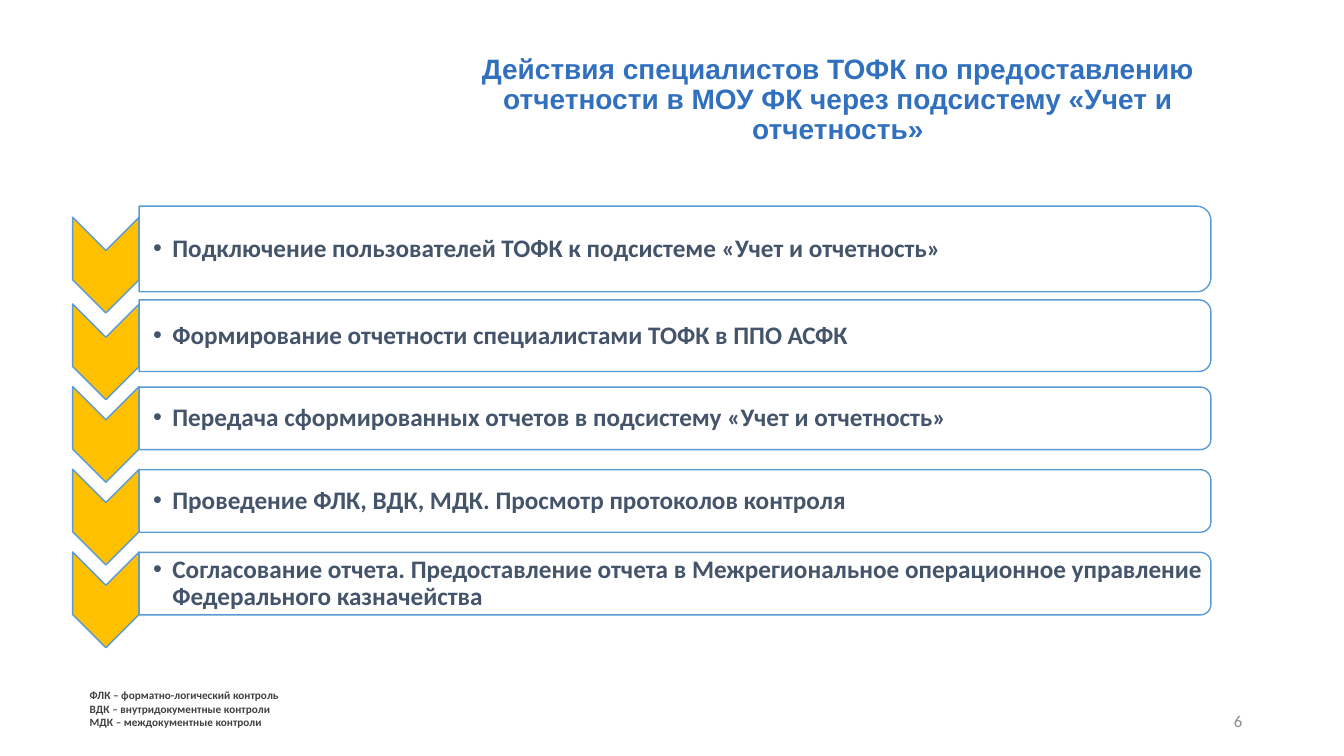
"""Build the slide listing the reporting steps as a chain of chevrons."""
from dataclasses import dataclass
from typing import Any

from lxml.etree import SubElement as Sub
from pptx import Presentation as Deck
from pptx.dml.color import RGBColor as Color
from pptx.enum.shapes import MSO_SHAPE as Kind
from pptx.enum.text import MSO_ANCHOR as Anchor, PP_ALIGN as Align
from pptx.oxml.ns import qn
from pptx.util import Emu, Pt

SCALE = 9144


@dataclass(frozen=True)
class Theme:
    title: str = "3070BE"
    body: str = "44546A"
    note: str = "404040"
    page: str = "8C8C8C"
    gold: str = "FFC000"
    edge: str = "5B9BD5"
    white: str = "FFFFFF"
    head: str = "Arial"
    sans: str = "Calibri"
    big: int = 20
    mid: int = 18
    norm: int = 12
    small: int = 8


@dataclass(frozen=True)
class Step:
    mid: int
    high: int
    text: str


@dataclass(frozen=True)
class Label:
    box: tuple[int, int, int, int]
    lines: tuple[str, ...]
    font: str
    size: int
    color: str
    bold: bool = True
    align: Align = Align.LEFT
    space: float = 1.0
    hang: int = 0
    bullet: bool = False
    inset: tuple[int, int, int, int] = (10, 5, 10, 5)


THEME = Theme()
LEFT, WIDE = 138, 1063
ARROW = (95, 66)
DROP = 16
STEPS = (
    Step(247, 85, "Подключение пользователей ТОФК к подсистеме «Учет и отчетность»"),
    Step(333, 71, "Формирование отчетности специалистами ТОФК в ППО АСФК"),
    Step(415, 62, "Передача сформированных отчетов в подсистему «Учет и отчетность»"),
    Step(497, 62, "Проведение ФЛК, ВДК, МДК. Просмотр протоколов контроля"),
    Step(579, 62, "Согласование отчета. Предоставление отчета в Межрегиональное "
                  "операционное управление Федерального казначейства"),
)
LABELS = (
    Label((942, 695, 300, 40), ("6",), THEME.sans, THEME.norm, THEME.page,
          bold=False, align=Align.RIGHT),
    Label((79, 674, 222, 58),
          ("ФЛК – форматно-логический контроль",
           "ВДК – внутридокументные контроли",
           "МДК – междокументные контроли"),
          THEME.sans, THEME.small, THEME.note, hang=19),
    Label((429, 27, 804, 145),
          ("Действия специалистов ТОФК по предоставлению отчетности "
           "в МОУ ФК через подсистему «Учет и отчетность»",),
          THEME.head, THEME.big, THEME.title, align=Align.CENTER, space=0.9),
)


def px(size: float) -> Emu:
    """Turn px into EMU."""
    return Emu(round(size * SCALE))


def put(item: Any, values: dict[str, Any]) -> None:
    """Set each value on the item."""
    for name, value in values.items():
        setattr(item, name, value)


def turn(slide: Any, kind: Kind, mid: tuple[float, float],
         size: tuple[int, int], fill: str) -> Any:
    """Draw a shape turned by 90 degrees about its centre."""
    x, y = mid
    wide, high = size
    shape = slide.shapes.add_shape(
        kind, px(x - wide / 2), px(y - high / 2), px(wide), px(high))
    shape.rotation = 90
    shape.shadow.inherit = False
    shape.fill.solid()
    shape.fill.fore_color.rgb = Color.from_string(fill)
    shape.line.color.rgb = Color.from_string(THEME.edge)
    shape.line.width = Pt(1)
    return shape


def write(slide: Any, label: Label) -> None:
    """Draw a label as a text box."""
    frame = slide.shapes.add_textbox(*map(px, label.box)).text_frame
    sides = ("margin_left", "margin_top", "margin_right", "margin_bottom")
    put(frame, {"word_wrap": True, "vertical_anchor": Anchor.MIDDLE,
                **dict(zip(sides, map(px, label.inset)))})
    for spot, line in enumerate(label.lines):
        para = frame.add_paragraph() if spot else frame.paragraphs[0]
        prop = para._p.get_or_add_pPr()
        if label.hang:
            prop.set("marL", str(px(label.hang)))
            prop.set("indent", str(px(-label.hang)))
        if label.bullet:
            Sub(prop, qn("a:buFont"), typeface="Arial")
            Sub(prop, qn("a:buChar"), char="•")
        put(para, {"alignment": label.align, "line_spacing": label.space})
        run = para.add_run()
        run.text = line
        put(run.font, {"name": label.font, "size": Pt(label.size), "bold": label.bold})
        run.font.color.rgb = Color.from_string(label.color)


def draw(slide: Any, step: Step) -> None:
    """Draw one step: chevron, frame and text."""
    turn(slide, Kind.CHEVRON, (LEFT - ARROW[1] / 2, step.mid + DROP), ARROW, THEME.gold)
    frame = turn(slide, Kind.ROUND_2_SAME_RECTANGLE, (LEFT + WIDE / 2, step.mid),
                 (step.high, WIDE), THEME.white)
    tint = frame.fill._xPr.find(qn("a:solidFill"))[0]
    Sub(tint, qn("a:alpha"), val="90000")
    high = step.high - 6
    write(slide, Label((LEFT, step.mid - high // 2, WIDE - 3, high), (step.text,),
                       THEME.sans, THEME.mid, THEME.body, space=0.9, hang=19,
                       bullet=True, inset=(14, 1, 1, 1)))


def main() -> None:
    """Build and save the deck."""
    deck = Deck()
    put(deck, {"slide_width": px(1333), "slide_height": px(750)})
    slide = deck.slides.add_slide(deck.slide_layouts[6])
    for step in STEPS:
        draw(slide, step)
    for label in LABELS:
        write(slide, label)
    deck.save("out.pptx")


if __name__ == "__main__":
    main()
